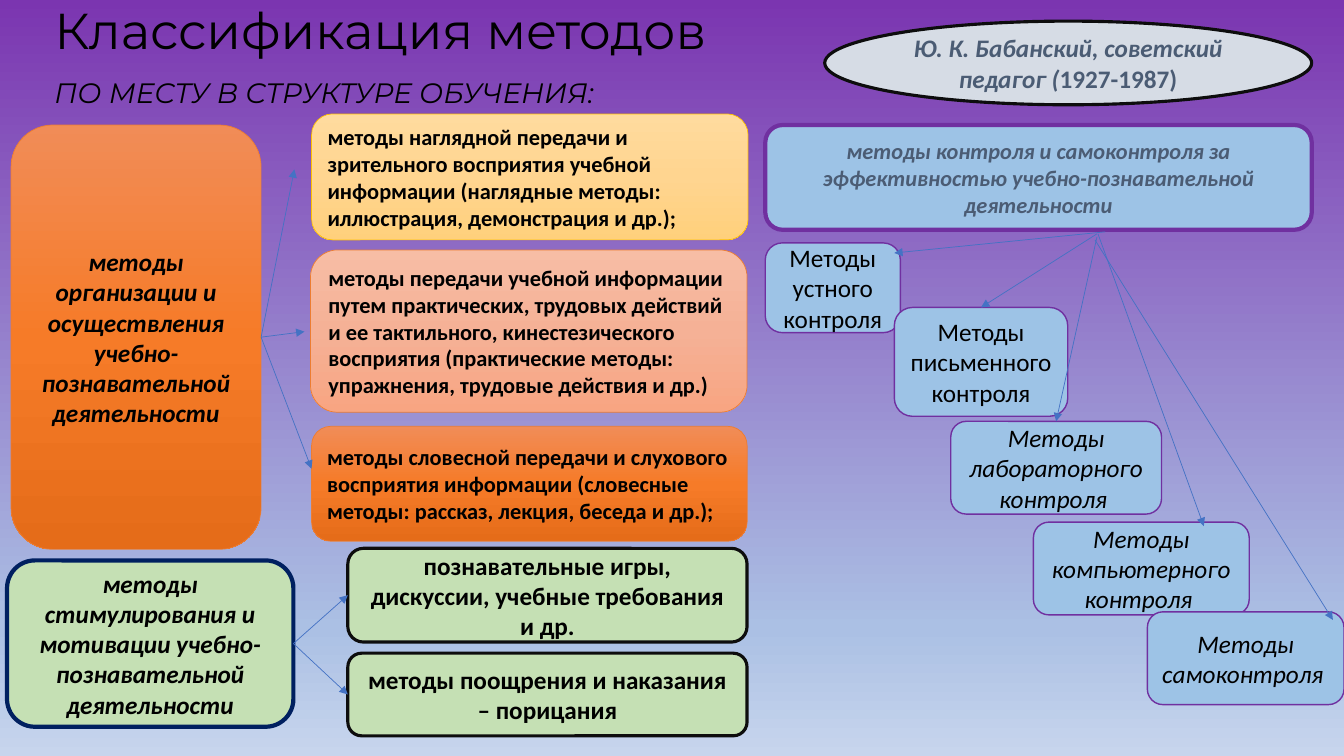
import pptx
import pptx.util
import pptx.oxml
import pptx.oxml.ns
import pptx.dml.color
import pptx.enum.shapes
import pptx.enum.text
import lxml.etree

RGB = pptx.dml.color.RGBColor
SHAPE = pptx.enum.shapes.MSO_SHAPE
ALIGN = pptx.enum.text.PP_ALIGN
ANCHOR = pptx.enum.text.MSO_ANCHOR
qn = pptx.oxml.ns.qn
Pt = pptx.util.Pt
PX = 9144

BLACK = RGB(0, 0, 0)
INK = RGB(0x0D, 0x0D, 0x0D)
SLATE = RGB(0x4B, 0x5C, 0x74)
SILVER = RGB(0xD6, 0xDC, 0xE5)
GREEN = RGB(0xC5, 0xE0, 0xB4)
NAVY = RGB(0x00, 0x20, 0x60)
SKY = RGB(0x9D, 0xC3, 0xE6)
PURPLE = RGB(0x70, 0x30, 0xA0)
RUST = RGB(0xED, 0x7D, 0x31)
GOLD = RGB(0xFF, 0xC0, 0x00)
BLUE = RGB(0x44, 0x72, 0xC4)
BACK = [(0, RGB(0x7B, 0x35, 0xB0)), (83, RGB(0xAB, 0xC0, 0xE4)), (100, RGB(0xC7, 0xD5, 0xED))]
ORANGE = [(0, RGB(0xF1, 0x8C, 0x57)), (50, RGB(0xF6, 0x7B, 0x28)), (100, RGB(0xE5, 0x6C, 0x19))]
YELLOW = [(0, RGB(0xFF, 0xDB, 0x9E)), (50, RGB(0xFF, 0xD5, 0x90)), (100, RGB(0xFF, 0xD0, 0x7C))]
PEACH = [(0, RGB(0xF7, 0xBD, 0xA5)), (50, RGB(0xF5, 0xB1, 0x96)), (100, RGB(0xF8, 0xA5, 0x82))]


def blend(fill, root, stops):
    fill.gradient()
    fill.gradient_angle = 270
    ramp = root.find(".//" + qn("a:gsLst"))
    for old in list(ramp):
        ramp.remove(old)
    for pos, color in stops:
        stop = lxml.etree.SubElement(ramp, qn("a:gs"), pos=str(pos * 1000))
        lxml.etree.SubElement(stop, qn("a:srgbClr"), val=str(color))


def write(para, text, face, size, color, bold, slant):
    run = para.add_run()
    run.text = text
    run.font.name = face
    run.font.size = Pt(size)
    run.font.color.rgb = color
    run.font.bold = bold
    run.font.italic = slant


deck = pptx.Presentation()
deck.slide_width = 1333 * PX
deck.slide_height = 750 * PX
slide = deck.slides.add_slide(deck.slide_layouts[6])
blend(slide.background.fill, slide.element, BACK)

heads = [
    ((44, -25, 1050, 116), "Классификация методов", 36, False, ANCHOR.MIDDLE, 0),
    ((44, 74, 635, 55), "ПО МЕСТУ В СТРУКТУРЕ ОБУЧЕНИЯ:", 20, True, ANCHOR.TOP, 10),
]
for area, text, size, slant, anchor, gap in heads:
    frame = slide.shapes.add_textbox(*[n * PX for n in area]).text_frame
    frame.word_wrap = True
    frame.vertical_anchor = anchor
    para = frame.paragraphs[0]
    para.line_spacing = 0.9
    para.space_before = Pt(gap)
    write(para, text, "Montserrat", size, BLACK, False, slant)

styles = {
    "author": (SILVER, INK, 2.25, 18, SLATE, True, ALIGN.CENTER),
    "teach": (ORANGE, RUST, 0.5, 18, BLACK, True, ALIGN.CENTER),
    "drive": (GREEN, NAVY, 3, 18, BLACK, True, ALIGN.CENTER),
    "check": (SKY, PURPLE, 3, 16, SLATE, True, ALIGN.CENTER),
    "verbal": (ORANGE, RUST, 0.5, 16, BLACK, True, ALIGN.LEFT),
    "visual": (YELLOW, GOLD, 0.5, 16, BLACK, True, ALIGN.LEFT),
    "action": (PEACH, RUST, 0.5, 16, BLACK, True, ALIGN.LEFT),
    "spur": (GREEN, INK, 2.25, 18, BLACK, True, ALIGN.CENTER),
    "test": (SKY, PURPLE, 1, 18, BLACK, False, ALIGN.CENTER),
}
boxes = [
    ("author", "author", (818, 21, 483, 83),
     [("Ю. К. Бабанский, советский педагог (", True), ("1927-1987)", False)]),
    ("teach", "teach", (11, 124, 248, 421),
     [("методы организации и осуществления учебно-познавательной деятельности", True)]),
    ("drive", "drive", (7, 556, 284, 165),
     [("методы стимулирования и мотивации учебно-познавательной деятельности", True)]),
    ("check", "check", (759, 124, 542, 104),
     [("методы контроля и самоконтроля за эффективностью учебно-познавательной деятельности", True)]),
    ("verbal", "verbal", (309, 423, 432, 114),
     [("методы словесной передачи и слухового восприятия информации "
       "(словесные методы: рассказ, лекция, беседа и др.);", False)]),
    ("visual", "visual", (309, 113, 433, 125),
     [("методы наглядной передачи и зрительного восприятия учебной информации "
       "(наглядные методы: иллюстрация, демонстрация и др.);", False)]),
    ("games", "spur", (345, 544, 396, 93),
     [("познавательные игры, дискуссии, учебные требования и др.", False)]),
    ("praise", "spur", (345, 648, 396, 82),
     [("методы поощрения и наказания – порицания", False)]),
    ("oral", "test", (759, 241, 134, 89), [("Методы устного контроля", False)]),
    ("written", "test", (887, 305, 172, 108), [("Методы письменного контроля", False)]),
    ("lab", "test", (943, 418, 209, 92), [("Методы лабораторного контроля ", True)]),
    ("digital", "test", (1025, 518, 214, 92), [("Методы компьютерного контроля ", True)]),
    ("self", "test", (1138, 607, 195, 92), [("Методы самоконтроля ", True)]),
    ("action", "action", (308, 248, 433, 161),
     [("методы передачи учебной информации путем практических, трудовых действий "
       "и ее тактильного, кинестезического восприятия (практические методы: "
       "упражнения, трудовые действия и др.)", False)]),
]
made = {}
for name, style, area, runs in boxes:
    paint, edge, width, size, color, bold, align = styles[style]
    kind = SHAPE.OVAL if name == "author" else SHAPE.ROUNDED_RECTANGLE
    box = slide.shapes.add_shape(kind, *[n * PX for n in area])
    made[name] = box
    box.shadow.inherit = False
    if isinstance(paint, list):
        blend(box.fill, box.element, paint)
    else:
        box.fill.solid()
        box.fill.fore_color.rgb = paint
    box.line.color.rgb = edge
    box.line.width = Pt(width)
    frame = box.text_frame
    frame.word_wrap = True
    frame.vertical_anchor = ANCHOR.MIDDLE
    para = frame.paragraphs[0]
    para.alignment = align
    for text, slant in runs:
        write(para, text, "Calibri", size, color, bold, slant)
made["oral"].adjustments[0] = 0.19

arrows = [
    ((258, 334, 309, 465), "teach", None),
    ((258, 334, 292, 168), "teach", None),
    ((258, 334, 302, 329), "teach", None),
    ((1096, 230, 887, 251), None, None),
    ((292, 638, 345, 689), "drive", ("praise", 1)),
    ((292, 638, 345, 591), "drive", ("games", 1)),
    ((1088, 232, 973, 305), None, ("written", 0)),
    ((1088, 235, 1048, 418), None, ("lab", 0)),
    ((1089, 232, 1194, 522), None, None),
    ((1086, 238, 1322, 615), None, None),
]
for ends, start, goal in arrows:
    arrow = slide.shapes.add_connector(
        pptx.enum.shapes.MSO_CONNECTOR.STRAIGHT, *[n * PX for n in ends])
    if start:
        arrow.begin_connect(made[start], 3)
    if goal:
        arrow.end_connect(made[goal[0]], goal[1])
    arrow.line.color.rgb = BLUE
    arrow.line.width = Pt(0.5)
    props = arrow.element.find(qn("p:spPr"))
    lxml.etree.SubElement(props.find(qn("a:ln")), qn("a:tailEnd"), type="triangle")
    lxml.etree.SubElement(props, qn("a:effectLst"))

deck.save("out.pptx")
